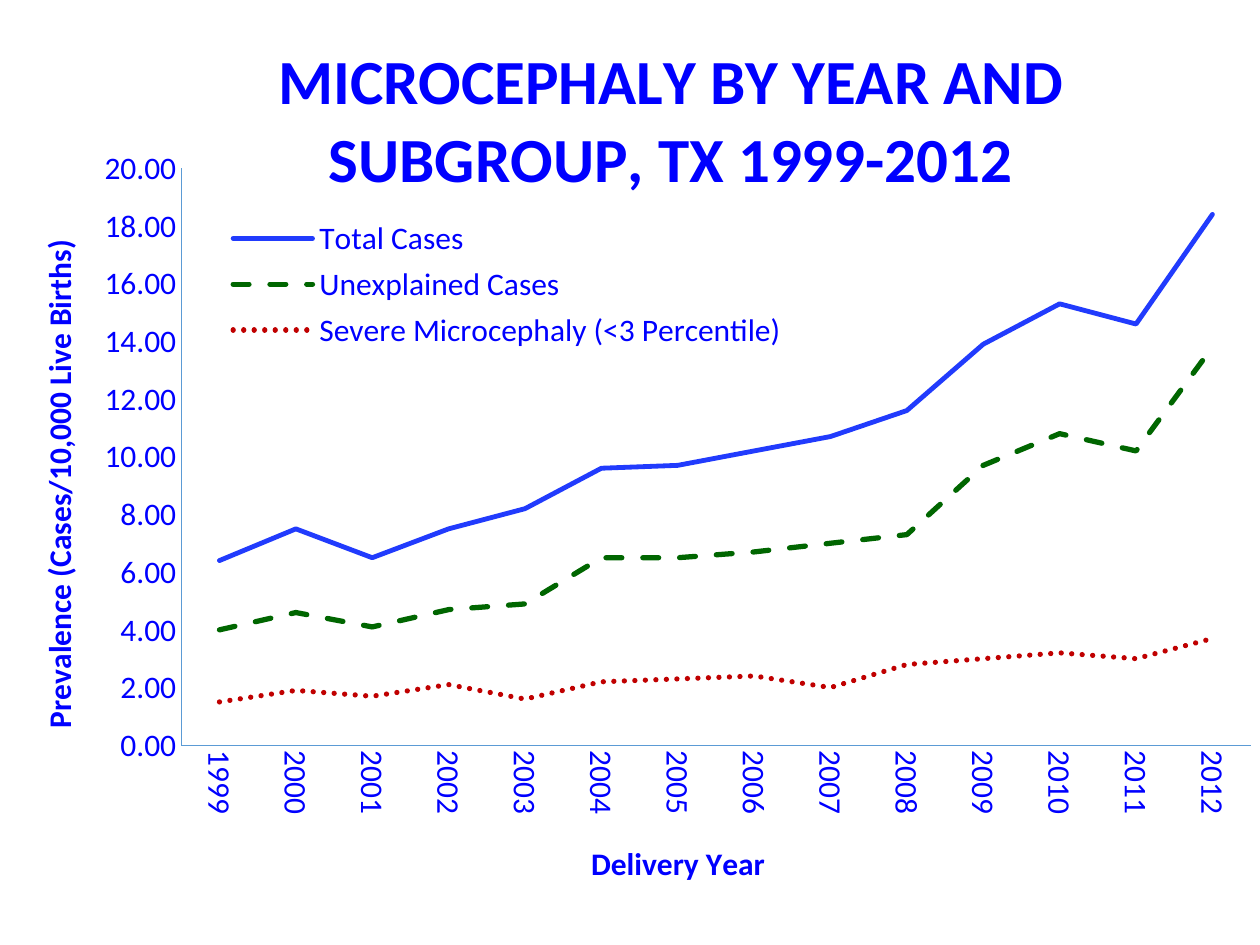
from lxml.etree import SubElement
from pptx import Presentation
from pptx.chart.data import CategoryChartData
from pptx.dml.color import RGBColor
from pptx.enum.chart import XL_CHART_TYPE, XL_LEGEND_POSITION, XL_MARKER_STYLE, XL_TICK_MARK
from pptx.enum.dml import MSO_LINE
from pptx.oxml.ns import qn
from pptx.util import Pt

COLORS = {
    "text": "0000FF",
    "axis": "5B9BD5",
    "total": "213BFD",
    "unexplained": "006600",
    "severe": "C00000",
}
FONT = "Calibri"
CHART_WIDTH, CHART_HEIGHT = Pt(725.76), Pt(498.24)
YEARS = [str(year) for year in range(1999, 2013)]
CASE_GROUPS = [
    ("Total Cases", "total", 2.75, MSO_LINE.SOLID,
     (6.4, 7.5, 6.5, 7.5, 8.2, 9.6, 9.7, 10.2, 10.7, 11.6, 13.9, 15.3, 14.6, 18.4)),
    ("Unexplained Cases", "unexplained", 3, MSO_LINE.DASH,
     (4, 4.6, 4.1, 4.7, 4.9, 6.5, 6.5, 6.7, 7, 7.3, 9.7, 10.8, 10.2, 13.8)),
    ("Severe Microcephaly (<3 Percentile)", "severe", 3, MSO_LINE.ROUND_DOT,
     (1.5, 1.9, 1.7, 2.1, 1.6, 2.2, 2.3, 2.4, 2, 2.8, 3, 3.2, 3, 3.7)),
]


def color(name):
    return RGBColor.from_string(COLORS[name])


def style_font(font, size, bold=False):
    font.name = FONT
    font.size = Pt(size)
    font.bold = bold
    font.color.rgb = color("text")


def write_title(title, text, size, x, y):
    title.text_frame.text = text
    style_font(title.text_frame.paragraphs[0].runs[0].font, size, True)
    place(title._element, 1, x, y)


def place(element, index, x, y, w=None, h=None, inner=False):
    """Give a chart part a manual layout, in points from the chart's corner."""
    for old_layout in element.findall(qn("c:layout")):
        element.remove(old_layout)
    layout = SubElement(element, qn("c:layout"))
    element.insert(index, layout)
    manual = SubElement(layout, qn("c:manualLayout"))
    settings = [("xMode", "edge"), ("yMode", "edge"),
                ("x", Pt(x) / CHART_WIDTH), ("y", Pt(y) / CHART_HEIGHT)]
    if w is not None:
        settings += [("w", Pt(w) / CHART_WIDTH), ("h", Pt(h) / CHART_HEIGHT)]
    if inner:
        settings.insert(0, ("layoutTarget", "inner"))
    for tag, value in settings:
        SubElement(manual, qn(f"c:{tag}")).set("val", str(value))


def style_axis(axis, title, x, y):
    axis.has_major_gridlines = False
    axis.major_tick_mark = axis.minor_tick_mark = XL_TICK_MARK.NONE
    axis.format.line.color.rgb = color("axis")
    axis.format.line.width = Pt(0.75)
    style_font(axis.tick_labels.font, 18)
    write_title(axis.axis_title, title, 18, x, y)


def style_series(series, color_name, width, dash):
    series.smooth = False
    series.marker.style = XL_MARKER_STYLE.NONE
    line = series.format.line
    line.color.rgb = color(color_name)
    line.width = Pt(width)
    line.dash_style = dash
    series._element.find(qn("c:spPr")).find(qn("a:ln")).set("cap", "rnd")


def style_legend(chart):
    chart.has_legend = True
    legend = chart.legend
    legend.position = XL_LEGEND_POSITION.RIGHT
    legend.include_in_layout = False
    style_font(legend.font, 18)
    place(legend._element, 1, 113.3, 109, 317, 83.3)


def add_prevalence_chart(slide):
    data = CategoryChartData(number_format="0.00")
    data.categories = YEARS
    for name, _, _, _, rates in CASE_GROUPS:
        data.add_series(name, rates)
    chart = slide.shapes.add_chart(
        XL_CHART_TYPE.LINE, Pt(18), Pt(12.24), CHART_WIDTH, CHART_HEIGHT, data).chart
    style_font(chart.font, 18)
    chart.has_title = True
    write_title(chart.chart_title, "MICROCEPHALY BY YEAR AND SUBGROUP, TX 1999-2012",
                36, 134.6, 2.5)

    style_axis(chart.category_axis, "Delivery Year", 316.5, 467.2)
    labels = chart.category_axis._element.find(qn("c:txPr"))
    labels.find(qn("a:bodyPr")).set("rot", "5400000")

    rates_axis = chart.value_axis
    style_axis(rates_axis, "Prevalence (Cases/10,000 Live Births)", 0, 122.9)
    rates_axis.axis_title.text_frame._txBody.bodyPr.set("rot", "-5400000")
    rates_axis.minimum_scale, rates_axis.maximum_scale = 0, 20
    rates_axis.major_unit = 2
    rates_axis.tick_labels.number_format = "0.00"
    rates_axis.tick_labels.number_format_is_linked = False

    chart.plots[0].vary_by_categories = False
    for series, (_, color_name, width, dash, _) in zip(chart.plots[0].series, CASE_GROUPS):
        style_series(series, color_name, width, dash)
    style_legend(chart)
    plot_area = chart._chartSpace.chart.plotArea
    place(plot_area, 0, 85.6, 84.2, 611.1, 330.8, inner=True)


def main():
    presentation = Presentation()
    presentation.slide_width, presentation.slide_height = Pt(720), Pt(540)
    slide = presentation.slides.add_slide(presentation.slide_layouts[6])
    add_prevalence_chart(slide)
    presentation.save("out.pptx")


if __name__ == "__main__":
    main()
